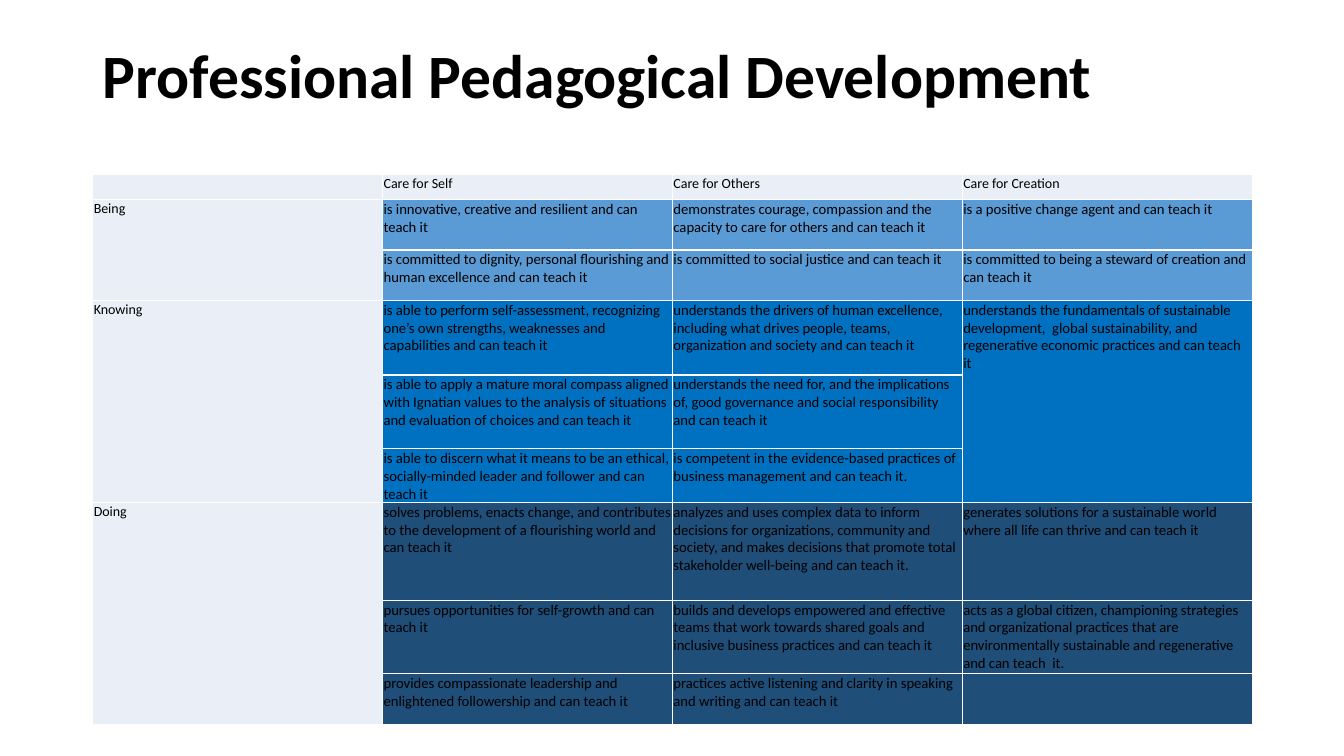
from lxml.etree import SubElement
from pptx import Presentation
from pptx.dml.color import RGBColor
from pptx.oxml.ns import qn
from pptx.util import Inches, Pt

FONT = "Calibri"
BLACK = RGBColor(0x00, 0x00, 0x00)
WHITE = RGBColor(0xFF, 0xFF, 0xFF)
PALE = RGBColor(0xEA, 0xEF, 0xF7)
LIGHT_BLUE = RGBColor(0x5B, 0x9B, 0xD5)
BLUE = RGBColor(0x00, 0x70, 0xC0)
NAVY = RGBColor(0x1F, 0x4E, 0x79)

HEADINGS = ["", "Care for Self", "Care for Others", "Care for Creation"]
SECTIONS = [
    ("Being", LIGHT_BLUE, [
        ("is innovative, creative and resilient and can teach it",
         "demonstrates courage, compassion and the capacity to care for others and can teach it",
         "is a positive change agent and can teach it"),
        ("is committed to dignity, personal flourishing and human excellence and can teach it",
         "is committed to social justice and can teach it",
         "is committed to being a steward of creation and can teach it"),
    ]),
    ("Knowing", BLUE, [
        ("is able to perform self-assessment, recognizing one’s own strengths, weaknesses "
         "and capabilities and can teach it",
         "understands the drivers of human excellence, including what drives people, teams, "
         "organization and society and can teach it",
         "understands the fundamentals of sustainable development,  global sustainability, "
         "and regenerative economic practices and can teach it"),
        ("is able to apply a mature moral compass aligned with Ignatian values to the analysis "
         "of situations and evaluation of choices and can teach it",
         "understands the need for, and the implications of, good governance and social "
         "responsibility and can teach it",
         ""),
        ("is able to discern what it means to be an ethical, socially-minded leader and "
         "follower and can teach it",
         "is competent in the evidence-based practices of business management and can teach it.",
         ""),
    ]),
    ("Doing", NAVY, [
        ("solves problems, enacts change, and contributes to the development of a flourishing "
         "world and can teach it",
         "analyzes and uses complex data to inform decisions for organizations, community and "
         "society, and makes decisions that promote total stakeholder well-being and can teach it.",
         "generates solutions for a sustainable world where all life can thrive and can teach it"),
        ("pursues opportunities for self-growth and can teach it",
         "builds and develops empowered and effective teams that work towards shared goals and "
         "inclusive business practices and can teach it",
         "acts as a global citizen, championing strategies and organizational practices that are "
         "environmentally sustainable and regenerative and can teach  it."),
        ("provides compassionate leadership and enlightened followership and can teach it",
         "practices active listening and clarity in speaking and writing and can teach it",
         ""),
    ]),
]
ROW_HEIGHTS = [0.25, 0.5, 0.5, 0.74, 0.73, 0.5, 0.97, 0.73, 0.5]
MERGES = [(1, 0, 2, 0), (3, 0, 5, 0), (6, 0, 8, 0), (3, 3, 5, 3)]


def set_font(paragraph, size, bold=False):
    font = paragraph.font
    font.name = FONT
    font.size = Pt(size)
    font.bold = bold
    font.color.rgb = BLACK


def add_title(slide, text):
    box = slide.shapes.add_textbox(Inches(0.92), Inches(0.4), Inches(11.5), Inches(1.45))
    box.text_frame.word_wrap = True
    paragraph = box.text_frame.paragraphs[0]
    paragraph.text = text
    paragraph.line_spacing = 0.9
    set_font(paragraph, 44, bold=True)


def add_borders(cell):
    properties = cell._tc.get_or_add_tcPr()
    for side in ("a:lnL", "a:lnR", "a:lnT", "a:lnB"):
        line = SubElement(properties, qn(side), w=str(Pt(1)))
        fill = SubElement(line, qn("a:solidFill"))
        SubElement(fill, qn("a:srgbClr"), val=str(WHITE))


def fill_cell(cell, text, size, color):
    add_borders(cell)
    cell.fill.solid()
    cell.fill.fore_color.rgb = color
    cell.margin_left = cell.margin_right = cell.margin_top = Inches(0.01)
    cell.margin_bottom = 0
    paragraph = cell.text_frame.paragraphs[0]
    paragraph.text = text
    set_font(paragraph, size)
    if not text:
        SubElement(paragraph._p, qn("a:endParaRPr"), sz=str(int(size * 100)))


def add_development_table(slide):
    frame = slide.shapes.add_table(
        len(ROW_HEIGHTS), len(HEADINGS),
        Inches(0.92), Inches(1.73), Inches(11.5), Inches(sum(ROW_HEIGHTS)))
    table = frame.table
    for row, height in zip(table.rows, ROW_HEIGHTS):
        row.height = Inches(height)
    for column, heading in enumerate(HEADINGS):
        fill_cell(table.cell(0, column), heading, 10, PALE)
    row = 1
    for name, color, outcomes in SECTIONS:
        for index, texts in enumerate(outcomes):
            fill_cell(table.cell(row, 0), "" if index else name, 10, PALE)
            for column, text in enumerate(texts, 1):
                fill_cell(table.cell(row, column), text, 10.5, color)
            row += 1
    for top, left, bottom, right in MERGES:
        table.cell(top, left).merge(table.cell(bottom, right))


def main():
    presentation = Presentation()
    presentation.slide_width = Inches(13.33)
    presentation.slide_height = Inches(7.5)
    slide = presentation.slides.add_slide(presentation.slide_layouts[6])
    add_title(slide, "Professional Pedagogical Development")
    add_development_table(slide)
    presentation.save("out.pptx")


if __name__ == "__main__":
    main()
